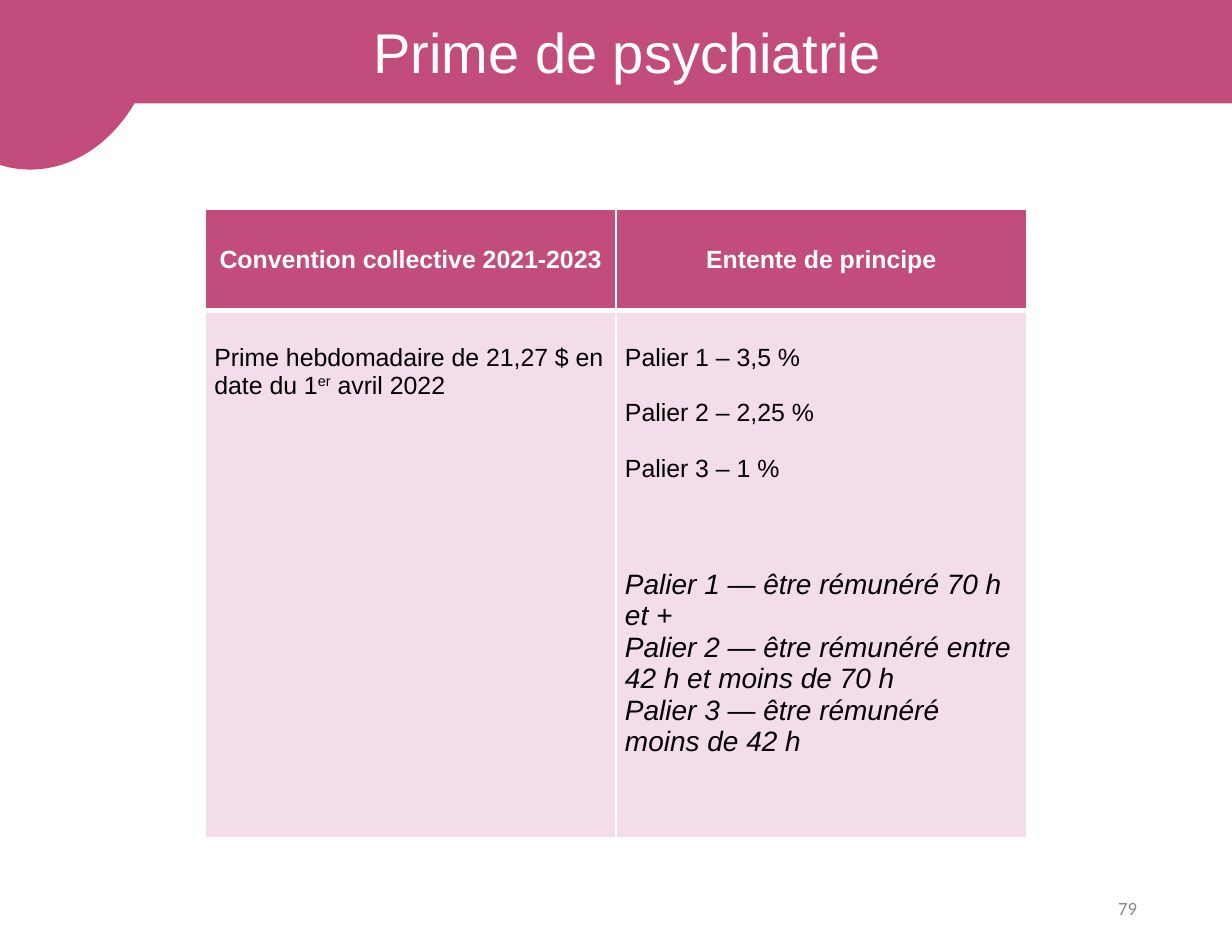
from lxml.etree import SubElement
from pptx import Presentation
from pptx.dml.color import RGBColor
from pptx.enum.shapes import MSO_SHAPE
from pptx.enum.text import MSO_ANCHOR, PP_ALIGN
from pptx.oxml.ns import qn
from pptx.util import Pt

THEME = {
    "pink": RGBColor.from_string("C24C7B"),
    "pale": RGBColor.from_string("F3DDEA"),
    "white": RGBColor.from_string("FFFFFF"),
    "black": RGBColor.from_string("000000"),
    "grey": RGBColor.from_string("888888"),
    "title": {"name": "Arial", "size": Pt(36)},
    "header": {"name": "Arial", "size": Pt(16), "bold": True},
    "body": {"name": "Arial", "size": Pt(16), "bold": False},
    "note": {"name": "Arial", "size": Pt(18), "bold": False, "italic": True},
    "number": {"name": "Calibri", "size": Pt(12)},
}


def add_run(paragraph, text, style, color):
    run = paragraph.add_run()
    run.text = text
    for name, value in THEME[style].items():
        setattr(run.font, name, value)
    run.font.color.rgb = THEME[color]
    return run


def format_cell(cell, fill, borders, formats):
    properties = cell._tc.get_or_add_tcPr()
    for side, width in borders.items():
        line = SubElement(properties, qn(f"a:{side}"), w=str(Pt(width)))
        solid = SubElement(line, qn("a:solidFill"))
        SubElement(solid, qn("a:srgbClr"), val=str(THEME["white"]))
    cell.fill.solid()
    cell.fill.fore_color.rgb = THEME[fill]
    for name, value in formats.items():
        setattr(cell, name, value)


presentation = Presentation()
presentation.slide_width, presentation.slide_height = Pt(792), Pt(612)
slide = presentation.slides.add_slide(presentation.slide_layouts[6])

# Title banner and corner circle
decorations = [
    (MSO_SHAPE.ROUNDED_RECTANGLE, (0, 0, 806.4, 65.5), "Prime de psychiatrie"),
    (MSO_SHAPE.OVAL, (-64, -108, 167, 216), ""),
]
for kind, box, text in decorations:
    shape = slide.shapes.add_shape(kind, *map(Pt, box))
    shape.shadow.inherit = False
    shape.fill.solid()
    shape.fill.fore_color.rgb = shape.line.color.rgb = THEME["pink"]
    shape.line.width = Pt(2)
    if text:
        shape.text_frame.vertical_anchor = MSO_ANCHOR.MIDDLE
        paragraph = shape.text_frame.paragraphs[0]
        paragraph.alignment = PP_ALIGN.CENTER
        add_run(paragraph, text, "title", "white")

# Slide number
number_box = slide.shapes.add_textbox(Pt(559.5), Pt(567.4), Pt(178.5), Pt(32.4))
number_box.text_frame.word_wrap = True
number_box.text_frame.vertical_anchor = MSO_ANCHOR.MIDDLE
paragraph = number_box.text_frame.paragraphs[0]
paragraph.alignment = PP_ALIGN.RIGHT
add_run(paragraph, "79", "number", "grey")

# Comparison table
table = slide.shapes.add_table(2, 2, Pt(132), Pt(134.8), Pt(528), Pt(404)).table
table.first_row = table.horz_banding = False
for column in table.columns:
    column.width = Pt(264)
for row, height in zip(table.rows, (64.8, 339)):
    row.height = Pt(height)

margins = {"margin_left": Pt(5.8), "margin_right": Pt(5.8), "margin_bottom": Pt(4)}
header_format = {**margins, "margin_top": Pt(4), "vertical_anchor": MSO_ANCHOR.MIDDLE}
body_format = {**margins, "margin_top": Pt(21.6), "vertical_anchor": MSO_ANCHOR.TOP}

# Header row
for column, text in enumerate(("Convention collective 2021-2023", "Entente de principe")):
    cell = table.cell(0, column)
    format_cell(cell, "pink", {"lnL": 1, "lnR": 1, "lnT": 1, "lnB": 3}, header_format)
    paragraph = cell.text_frame.paragraphs[0]
    paragraph.alignment = PP_ALIGN.CENTER
    add_run(paragraph, text, "header", "white")

# Body row
for column in range(2):
    format_cell(table.cell(1, column), "pale", {"lnL": 1, "lnR": 1, "lnT": 3, "lnB": 1}, body_format)

paragraph = table.cell(1, 0).text_frame.paragraphs[0]
add_run(paragraph, "Prime hebdomadaire de 21,27 $ en date du 1", "body", "black")
superscript = add_run(paragraph, "er", "body", "black")
superscript._r.get_or_add_rPr().set("baseline", "30000")
add_run(paragraph, " avril 2022", "body", "black")

tiers = [
    ("Palier 1 – 3,5 %", "body", 0),
    ("Palier 2 – 2,25 %", "body", 17.8),
    ("Palier 3 – 1 %", "body", 17.8),
    ("Palier 1 — être rémunéré 70 h et +", "note", 55.8),
    ("Palier 2 — être rémunéré entre 42 h et moins de 70 h", "note", 0),
    ("Palier 3 — être rémunéré moins de 42 h", "note", 0),
]
text_frame = table.cell(1, 1).text_frame
for index, (text, style, gap) in enumerate(tiers):
    paragraph = text_frame.add_paragraph() if index else text_frame.paragraphs[0]
    paragraph.space_before = Pt(gap)
    add_run(paragraph, text, style, "black")

presentation.save("out.pptx")
